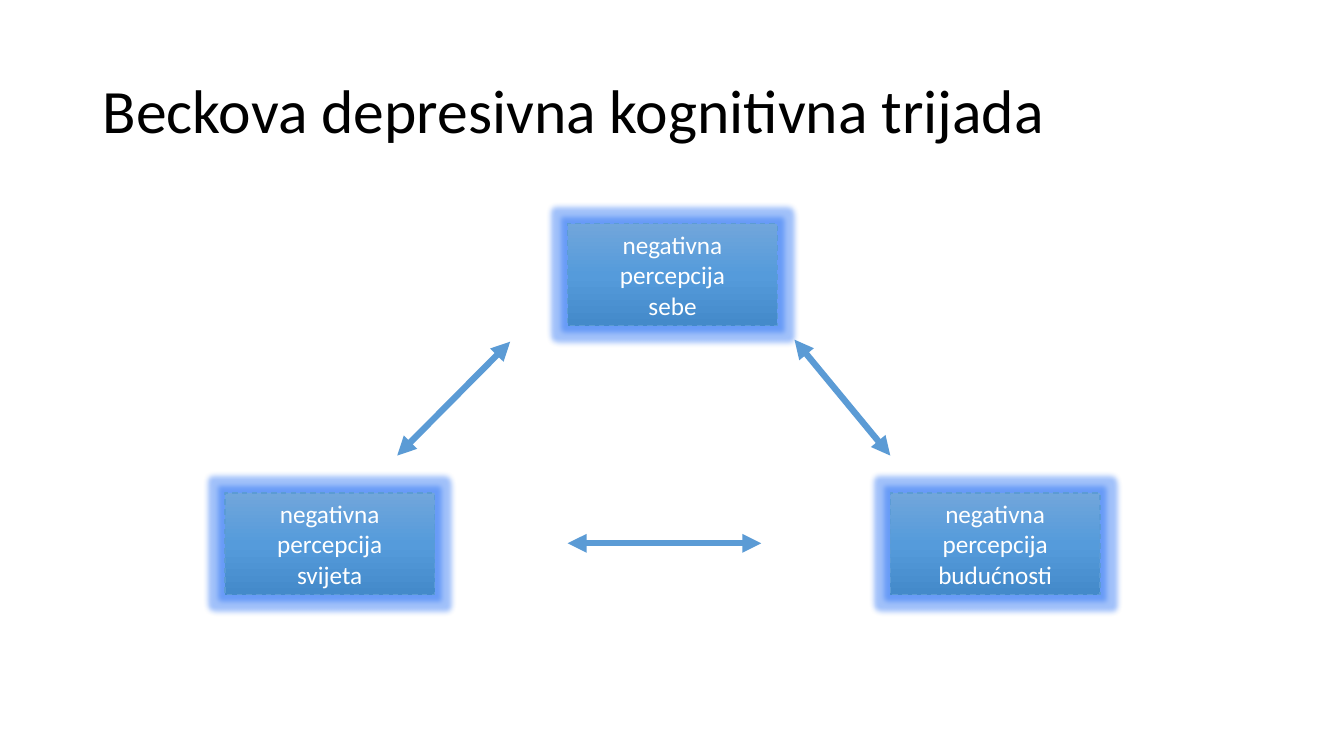
from copy import deepcopy

from lxml import etree
from pptx import Presentation
from pptx import util as u
from pptx.dml.color import RGBColor
from pptx.enum import dml, shapes, text
from pptx.oxml.ns import qn

PX = 9144
BLACK = RGBColor(0x00, 0x00, 0x00)
WHITE = RGBColor(0xFF, 0xFF, 0xFF)
BLUE = RGBColor(0x5B, 0x9B, 0xD5)
GLOW = RGBColor(0x14, 0x64, 0xF4)
GRADIENT = (
    (0, RGBColor(0x71, 0xA6, 0xDB)),
    (0.5, RGBColor(0x55, 0x9B, 0xDB)),
    (1, RGBColor(0x44, 0x8A, 0xCA)),
)
TITLE_FONT = {"name": "Calibri", "size": u.Pt(44), "bold": False}
BOX_FONT = {"name": "Calibri", "size": u.Pt(18)}
BOX_W, BOX_H = 208, 101


def px(*lengths):
    """Turn px lengths into EMU."""
    return [u.Emu(n * PX) for n in lengths]


def set_font(font, formats, color):
    """Apply format values and a colour to a font."""
    for name, value in formats.items():
        setattr(font, name, value)
    font.color.rgb = color


def add_title(slide, box, title):
    """Place the title placeholder in its box."""
    sp = slide.shapes.title
    sp.left, sp.top, sp.width, sp.height = px(*box)
    tf = sp.text_frame
    tf.text = title
    tf.auto_size = text.MSO_AUTO_SIZE.NONE
    tf.vertical_anchor = text.MSO_ANCHOR.MIDDLE
    p = tf.paragraphs[0]
    p.alignment, p.line_spacing = text.PP_ALIGN.LEFT, 0.9
    set_font(p.runs[0].font, TITLE_FONT, BLACK)


def add_glow(sp):
    """Put a soft coloured glow around a shape."""
    sp.shadow.inherit = False
    effects = sp._element.spPr.find(qn("a:effectLst"))
    glow = etree.SubElement(effects, qn("a:glow"), rad=str(u.Pt(8)))
    color = etree.SubElement(glow, qn("a:srgbClr"), val=str(GLOW))
    etree.SubElement(color, qn("a:alpha"), val="40000")


def fill_gradient(sp):
    """Fill a shape with the vertical three-stop gradient."""
    sp.fill.gradient()
    sp.fill.gradient_angle = 270
    stops = sp._element.spPr.find(".//" + qn("a:gsLst"))
    stops.append(deepcopy(stops[0]))
    for stop, (position, color) in zip(sp.fill.gradient_stops, GRADIENT):
        stop.position, stop.color.rgb = position, color


def add_belief(slide, left, top, lines):
    """Draw one glowing box of the triad."""
    sp = slide.shapes.add_shape(
        shapes.MSO_SHAPE.RECTANGLE, *px(left, top, BOX_W, BOX_H))
    fill_gradient(sp)
    add_glow(sp)
    sp.line.color.rgb = BLUE
    sp.line.width = u.Pt(1)
    sp.line.dash_style = dml.MSO_LINE.DASH
    tf = sp.text_frame
    tf.word_wrap = True
    tf.vertical_anchor = text.MSO_ANCHOR.MIDDLE
    tf.text = "\n".join(lines)
    for p in tf.paragraphs:
        p.alignment = text.PP_ALIGN.CENTER
        set_font(p.runs[0].font, BOX_FONT, WHITE)


def add_arrow(slide, *ends):
    """Draw a thick arrow with a head at both ends."""
    line = slide.shapes.add_connector(shapes.MSO_CONNECTOR.STRAIGHT, *px(*ends))
    line.line.color.rgb = BLUE
    line.line.width = u.Pt(4.5)
    ln = line.line._get_or_add_ln()
    for end in ("a:headEnd", "a:tailEnd"):
        etree.SubElement(ln, qn(end), type="triangle")
    etree.SubElement(line._element.spPr, qn("a:effectLst"))


def add_triad(slide, box):
    """Place the three boxes and their arrows within the given box."""
    x, y, w, h = box
    bottom = y + h - BOX_H
    middle = bottom + BOX_H // 2
    add_belief(slide, x + 340, y, ["negativna percepcija", "sebe"])
    add_belief(slide, x + w - BOX_W, bottom, ["negativna percepcija budućnosti"])
    add_belief(slide, x, bottom, ["negativna percepcija", "svijeta"])
    add_arrow(slide, x + 565, y + 115, x + 660, y + 230)
    add_arrow(slide, x + 340, middle, x + 532, middle)
    add_arrow(slide, x + 283, y + 117, x + 171, y + 230)


def main():
    """Build and save the slide."""
    prs = Presentation()
    prs.slide_width, prs.slide_height = px(1333, 750)
    slide = prs.slides.add_slide(prs.slide_layouts[5])
    add_title(slide, (92, 40, 1150, 145), "Beckova depresivna kognitivna trijada")
    add_triad(slide, (223, 222, 868, 368))
    prs.save("out.pptx")


if __name__ == "__main__":
    main()
